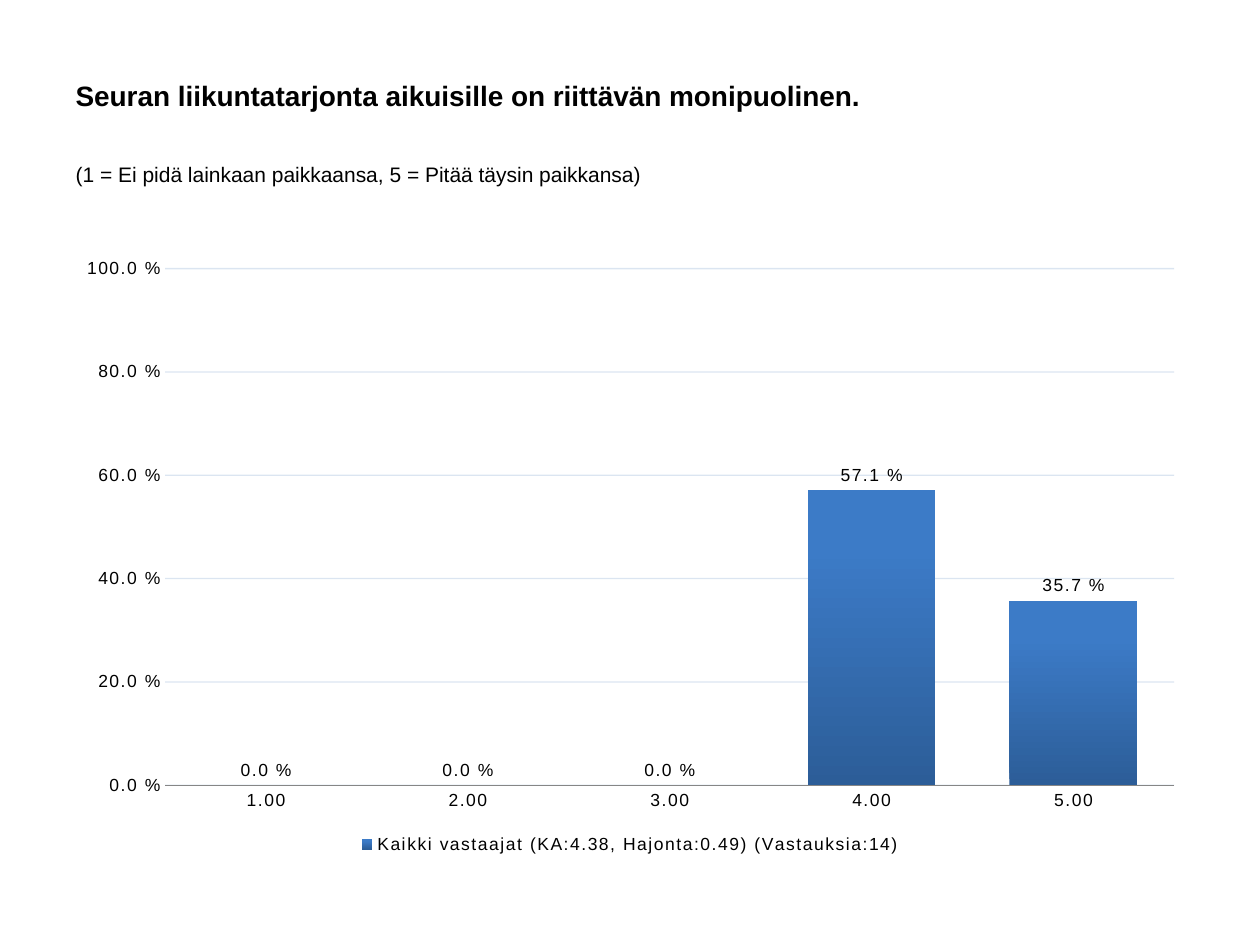
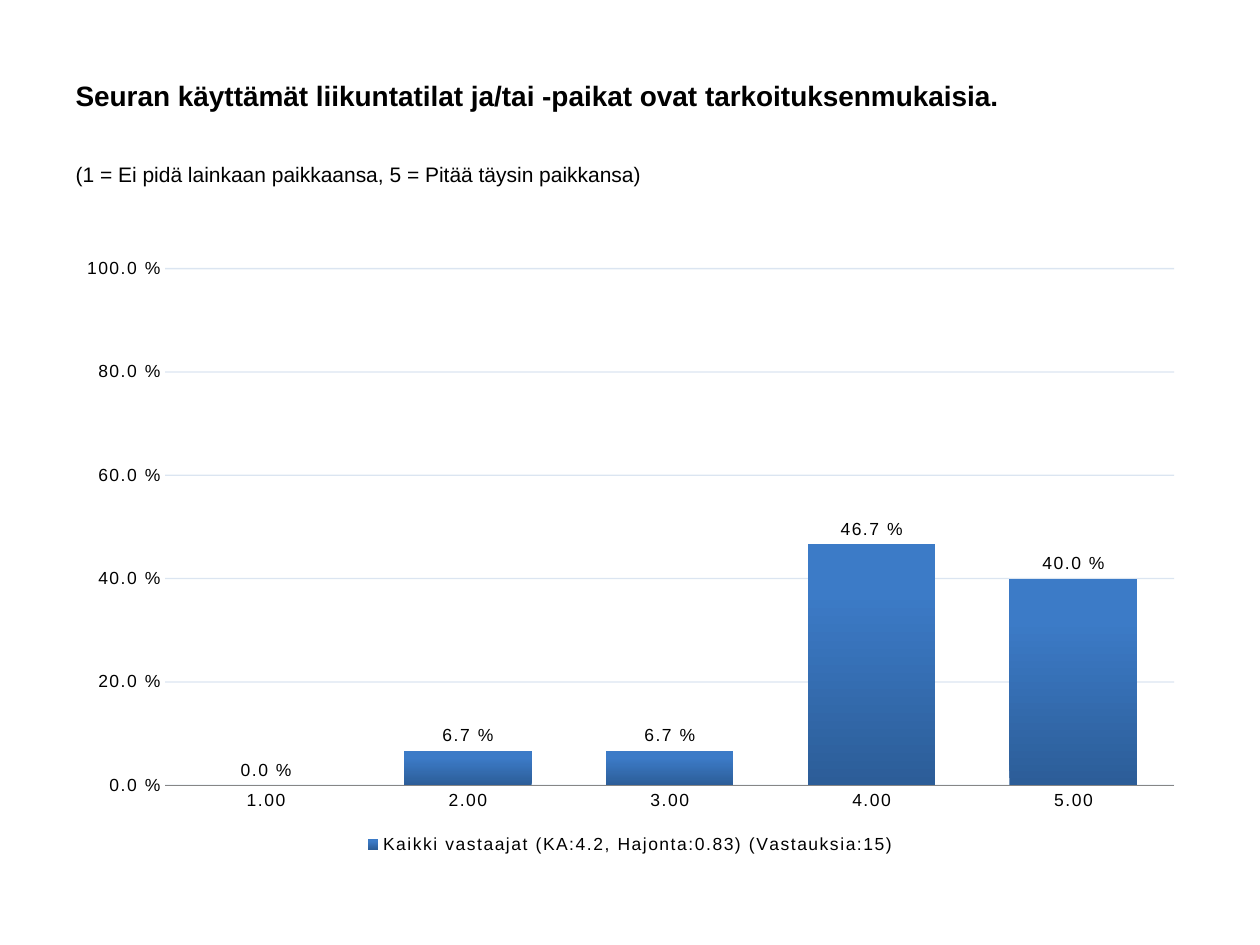
import pptx
import pptx.chart.data
import pptx.dml.color
import pptx.enum.chart
import pptx.enum.text
import pptx.oxml
import pptx.oxml.ns
import pptx.util

Pt = pptx.util.Pt
qn = pptx.oxml.ns.qn

COLORS = {
    "text": "000000",
    "grid": "4F81BD",
    "axis": "868686",
    "bar_bottom": "2C5D98",
    "bar_top": "3C7BC7",
}
PERCENT = "0.0\\ %"
TITLE_BOX = (36, 26, 648, 57)
SCALE_BOX = (36, 88.5, 648, 42.5)
CHART_BOX = (36, 139.5, 648, 351.5)
PLOT_PORTION = {"x": 0.09, "y": 0.04, "w": 0.89, "h": 0.84}
TITLE_FORMAT = {"name": "Arial", "size": Pt(16), "bold": True}
SCALE_FORMAT = {"name": "Arial", "size": Pt(12), "bold": False}
CHART_FORMAT = {"name": "Arial", "size": Pt(10), "bold": False}
SCALE_TEXT = "(1 = Ei pidä lainkaan paikkaansa, 5 = Pitää täysin paikkansa)"
CATEGORIES = ["1.00", "2.00", "3.00", "4.00", "5.00"]

QUESTIONS = [
    (
        "Seuran liikuntatarjonta aikuisille on riittävän monipuolinen.",
        "Kaikki vastaajat (KA:4.38, Hajonta:0.49) (Vastauksia:14)",
        [0, 0, 0, 0.571, 0.357],
    ),
    (
        "Seuran käyttämät liikuntatilat ja/tai -paikat ovat tarkoituksenmukaisia.",
        "Kaikki vastaajat (KA:4.2, Hajonta:0.83) (Vastauksia:15)",
        [0, 0.067, 0.067, 0.467, 0.4],
    ),
]


def rgb(name):
    return pptx.dml.color.RGBColor.from_string(COLORS[name])


def apply(target, values):
    for name, value in values.items():
        setattr(target, name, value)


def format_font(font, values):
    apply(font, values)
    font.color.rgb = rgb("text")


def fill_placeholder(shape, box, text, font_values, anchor):
    apply(shape, dict(zip(("left", "top", "width", "height"), map(Pt, box))))
    frame = shape.text_frame
    frame.text = text
    apply(frame, {"vertical_anchor": anchor, "word_wrap": True,
                  "auto_size": pptx.enum.text.MSO_AUTO_SIZE.NONE})
    paragraph = frame.paragraphs[0]
    paragraph.alignment = pptx.enum.text.PP_ALIGN.LEFT
    format_font(paragraph.runs[0].font, font_values)
    return paragraph


def add_heading(slide, title):
    anchors = pptx.enum.text.MSO_ANCHOR
    fill_placeholder(slide.shapes.title, TITLE_BOX, title, TITLE_FORMAT, anchors.MIDDLE)
    paragraph = fill_placeholder(
        slide.placeholders[1], SCALE_BOX, SCALE_TEXT, SCALE_FORMAT, anchors.TOP
    )
    paragraph.space_before = Pt(2.4)
    properties = paragraph._p.get_or_add_pPr()
    properties.set("marL", "0")
    properties.set("indent", "0")
    properties.append(pptx.oxml.parse_xml(f"<a:buNone {pptx.oxml.ns.nsdecls('a')}/>"))


def format_axes(chart):
    marks = pptx.enum.chart.XL_TICK_MARK
    for axis in (chart.category_axis, chart.value_axis):
        apply(axis, {"major_tick_mark": marks.NONE, "minor_tick_mark": marks.NONE})
        format_font(axis.tick_labels.font, CHART_FORMAT)
    category_line = chart.category_axis.format.line
    category_line.color.rgb = rgb("axis")
    category_line.width = Pt(0.75)

    value_axis = chart.value_axis
    apply(value_axis, {"minimum_scale": 0, "maximum_scale": 1, "major_unit": 0.2,
                       "has_major_gridlines": True})
    apply(value_axis.tick_labels,
          {"number_format": PERCENT, "number_format_is_linked": False})
    value_axis.format.line.fill.background()
    grid_line = value_axis.major_gridlines.format.line
    grid_line.color.rgb = rgb("grid")
    grid_line.width = Pt(0.75)
    grid_color = next(value_axis.major_gridlines._xAx.iter(qn("a:srgbClr")))
    grid_color.append(pptx.oxml.parse_xml(
        f"<a:alpha {pptx.oxml.ns.nsdecls('a')} val='20000'/>"
    ))


def format_bars(plot):
    apply(plot, {"gap_width": 58, "vary_by_categories": False, "has_data_labels": True})
    labels = plot.data_labels
    apply(labels, {"show_value": True, "number_format": PERCENT,
                   "number_format_is_linked": False,
                   "position": pptx.enum.chart.XL_LABEL_POSITION.OUTSIDE_END})
    format_font(labels.font, CHART_FORMAT)
    fill = plot.series[0].format.fill
    fill.gradient()
    fill.gradient_angle = 90
    for stop, color, position in zip(
        fill.gradient_stops, ("bar_bottom", "bar_top"), (0, 0.8)
    ):
        stop.color.rgb = rgb(color)
        stop.position = position


def place_plot(chart):
    plot_area = next(chart._chartSpace.iter(qn("c:plotArea")))
    for layout in plot_area.findall(qn("c:layout")):
        plot_area.remove(layout)
    sizes = "".join(f"<c:{key} val='{value}'/>" for key, value in PLOT_PORTION.items())
    plot_area.insert(0, pptx.oxml.parse_xml(
        f"<c:layout {pptx.oxml.ns.nsdecls('c')}><c:manualLayout>"
        "<c:layoutTarget val='inner'/><c:xMode val='edge'/><c:yMode val='edge'/>"
        f"{sizes}</c:manualLayout></c:layout>"
    ))


def add_answer_chart(slide, box, series_name, shares):
    data = pptx.chart.data.CategoryChartData(number_format=PERCENT)
    data.categories = CATEGORIES
    data.add_series(series_name, shares)
    chart = slide.shapes.add_chart(
        pptx.enum.chart.XL_CHART_TYPE.COLUMN_CLUSTERED, *map(Pt, box), data
    ).chart
    apply(chart, {"has_title": False, "has_legend": True})
    format_font(chart.font, {**CHART_FORMAT, "name": "Calibri"})
    apply(chart.legend, {"position": pptx.enum.chart.XL_LEGEND_POSITION.BOTTOM,
                         "include_in_layout": False})
    format_font(chart.legend.font, CHART_FORMAT)
    format_axes(chart)
    format_bars(chart.plots[0])
    place_plot(chart)
    for properties in chart._chartSpace.iter(qn("a:defRPr")):
        properties.set("spc", "100")


def add_question_slide(presentation, title, series_name, shares):
    slide = presentation.slides.add_slide(presentation.slide_layouts[1])
    add_heading(slide, title)
    add_answer_chart(slide, CHART_BOX, series_name, shares)


def main():
    presentation = pptx.Presentation()
    apply(presentation, {"slide_width": Pt(720), "slide_height": Pt(540)})
    for question in QUESTIONS:
        add_question_slide(presentation, *question)
    presentation.save("out.pptx")


if __name__ == "__main__":
    main()
